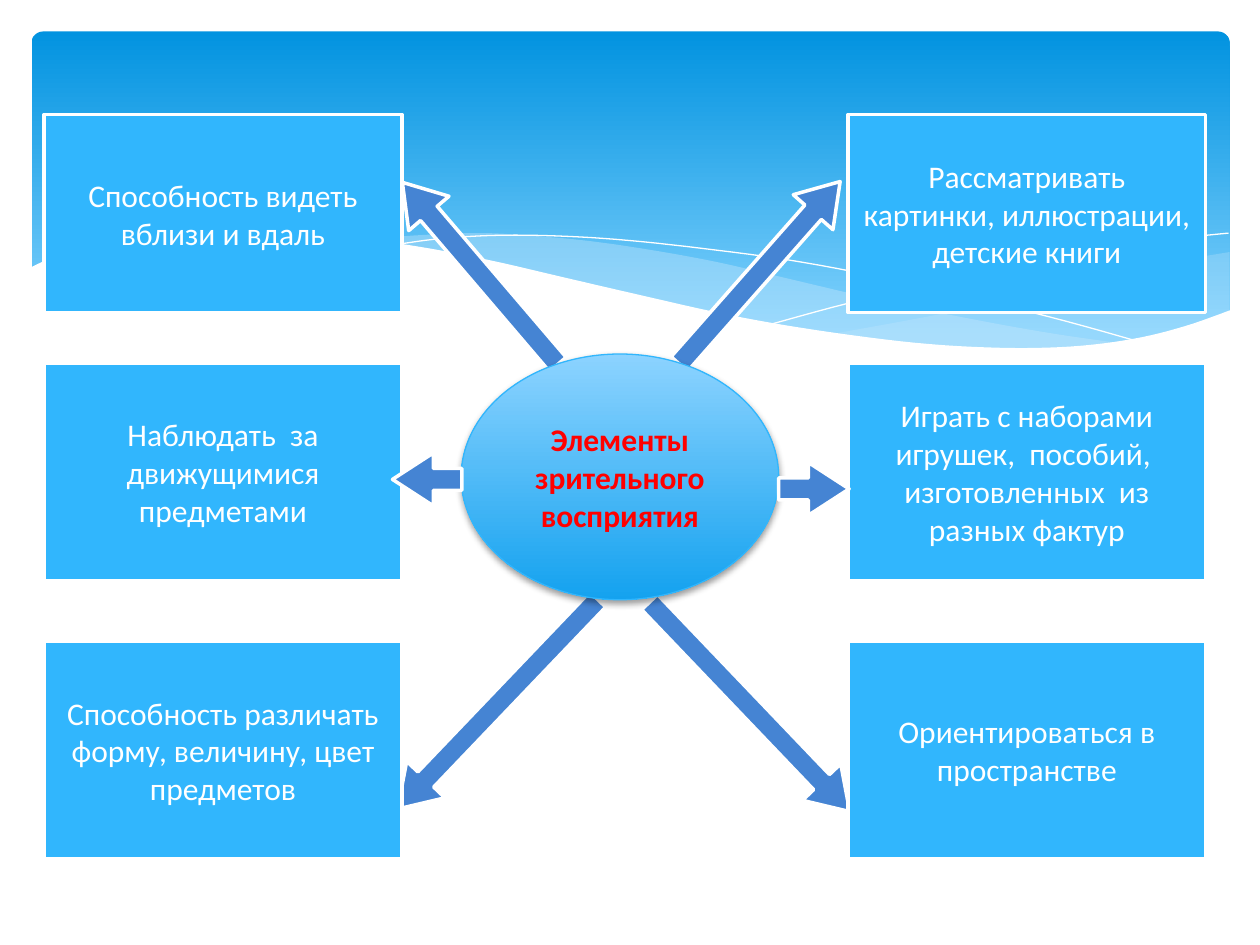
from dataclasses import dataclass
from typing import NamedTuple

from lxml import etree
from pptx import Presentation
from pptx import util as u
from pptx.dml.color import RGBColor
from pptx.enum import shapes, text
from pptx.oxml import ns

PX = 9144  # 100 px to the inch


@dataclass(frozen=True)
class Theme:
    font: str = "Calibri"
    size: int = 18
    white: str = "FFFFFF"
    card: str = "31B6FD"
    arrow: str = "4584D3"
    title: str = "FF0000"
    wave: str = "C6E7FC"
    sky: tuple[str, str] = ("0293E0", "83D3FE")
    hub: tuple[str, str] = ("8CD3FF", "14A2EF")
    border: float = 2
    hub_border: float = 0.75


class Box(NamedTuple):
    left: int
    top: int
    width: int
    height: int


class Arrow(NamedTuple):
    box: Box
    rotation: float


class Row(NamedTuple):
    top: int
    height: int
    left_text: str
    right_text: str


THEME = Theme()
CARD_WIDTH = 284
CARD_LEFTS = (35, 673)
ROWS = (
    Row(91, 157, "Способность видеть вблизи и вдаль",
        "Рассматривать картинки, иллюстрации, детские книги"),
    Row(288, 173, "Наблюдать  за движущимися предметами",
        "Играть с наборами игрушек,  пособий,  изготовленных  из разных фактур"),
    Row(509, 173, "Способность различать форму, величину, цвет предметов",
        "Ориентироваться в пространстве"),
)
DIAGONAL_ARROWS = (
    Arrow(Box(574, 446, 42, 230), 316.3),
    Arrow(Box(374, 444, 42, 230), 43.7),
    Arrow(Box(360, 122, 42, 190), 139.5),
    Arrow(Box(582, 120, 42, 193), 221.4),
)
SIDE_ARROWS = (
    Arrow(Box(625, 360, 42, 56), 270),
    Arrow(Box(318, 353, 42, 55), 90),
)

Points = list[tuple[float, float]]
RIGHT_WAVE_TOP: Points = [(976, 200), (935, 207), (891, 216), (832, 230), (753, 248),
                          (661, 265)]
RIGHT_WAVE_BOTTOM: Points = [(661, 265), (705, 271), (757, 275), (814, 278), (863, 275),
                             (913, 267), (949, 257), (976, 247)]
LONG_WAVE_TOP: Points = [(893, 273), (837, 265), (775, 254), (706, 240), (629, 222),
                         (569, 208), (514, 198), (465, 191), (420, 187), (380, 185),
                         (328, 187), (286, 191)]
LONG_WAVE_BOTTOM: Points = [(286, 191), (342, 199), (404, 211), (449, 222), (530, 240),
                            (601, 255), (665, 266), (722, 274), (773, 277), (818, 278),
                            (857, 277), (893, 273)]
LONG_LINE: Points = [(309, 195), (344, 190), (387, 187), (433, 187), (489, 190), (556, 197),
                     (636, 208), (727, 226), (831, 251), (907, 272)]
RIGHT_LINE: Points = [(613, 257), (672, 241), (748, 223), (836, 204), (910, 192), (975, 185)]
WHITE_EDGE: Points = [(977, 246), (940, 259), (899, 269), (850, 275), (793, 276), (726, 272),
                      (648, 262), (579, 250), (503, 233), (447, 220), (391, 207), (340, 197),
                      (292, 190), (250, 186), (211, 184), (161, 184), (119, 187), (85, 193),
                      (59, 199), (40, 205), (23, 213)]
WHITE_BASE: Points = [(23, 329), (977, 329)]


def smooth(keys: Points, steps: int = 6) -> Points:
    """Catmull-Rom curve through the key points."""
    padded = [keys[0], *keys, keys[-1]]
    curve = [keys[0]]
    for a, b, c, d in zip(padded, padded[1:], padded[2:], padded[3:]):
        for step in range(1, steps + 1):
            t = step / steps
            curve.append(tuple(
                (2 * q + (r - p) * t + (2 * p - 5 * q + 4 * r - s) * t ** 2
                 + (3 * q - p - 3 * r + s) * t ** 3) / 2
                for p, q, r, s in zip(a, b, c, d)))
    return curve


def paint(shape, fill: str, line: str | None = None, width: float = 0) -> None:
    shape.shadow.inherit = False
    shape.fill.solid()
    shape.fill.fore_color.rgb = RGBColor.from_string(fill)
    outline(shape, line, width)


def outline(shape, color: str | None, width: float) -> None:
    if color is None:
        shape.line.fill.background()
        return
    shape.line.color.rgb = RGBColor.from_string(color)
    shape.line.width = u.Pt(width)


def paint_gradient(shape, colors: tuple[str, str], end: float) -> None:
    """Fill from top to bottom, reaching the second colour at the given share."""
    shape.shadow.inherit = False
    shape.fill.gradient()
    shape.fill.gradient_angle = 270
    for stop, color, position in zip(shape.fill.gradient_stops, colors, (0, end)):
        stop.color.rgb = RGBColor.from_string(color)
        stop.position = position


def add_preset(slide, kind: shapes.MSO_SHAPE, box: Box):
    return slide.shapes.add_shape(kind, *(u.Emu(value * PX) for value in box))


def add_path(slide, points: Points, closed: bool = True):
    start, *rest = [(x * PX, y * PX) for x, y in points]
    builder = slide.shapes.build_freeform(*start, scale=1.0)
    builder.add_line_segments(rest, close=closed)
    return builder.convert_to_shape()


def add_wave(slide, points: Points, opacity: int) -> None:
    wave = add_path(slide, points)
    paint(wave, THEME.wave)
    color = wave.fill._xPr.find(".//" + ns.qn("a:srgbClr"))
    etree.SubElement(color, ns.qn("a:alpha"), val=str(opacity * 1000))


def add_hairline(slide, keys: Points) -> None:
    line = add_path(slide, smooth(keys), closed=False)
    line.shadow.inherit = False
    line.fill.background()
    outline(line, THEME.white, 0)


def add_backdrop(slide) -> None:
    sky = add_preset(slide, shapes.MSO_SHAPE.ROUNDED_RECTANGLE, Box(25, 25, 951, 270))
    sky.adjustments[0] = 0.034
    paint_gradient(sky, THEME.sky, 0.9)
    outline(sky, None, 0)
    add_wave(slide, smooth(RIGHT_WAVE_TOP) + smooth(RIGHT_WAVE_BOTTOM), 29)
    add_wave(slide, smooth(LONG_WAVE_TOP) + smooth(LONG_WAVE_BOTTOM), 40)
    add_hairline(slide, LONG_LINE)
    add_hairline(slide, RIGHT_LINE)
    paint(add_path(slide, smooth(WHITE_EDGE) + WHITE_BASE), THEME.white)


def add_arrow(slide, arrow: Arrow) -> None:
    pointer = add_preset(slide, shapes.MSO_SHAPE.DOWN_ARROW, arrow.box)
    pointer.adjustments[0], pointer.adjustments[1] = 0.415, 0.771
    pointer.rotation = arrow.rotation
    paint(pointer, THEME.arrow, THEME.white, THEME.border)


def write(shape, wording: str, color: str, bold: bool = False) -> None:
    frame = shape.text_frame
    frame.word_wrap = True
    frame.vertical_anchor = text.MSO_ANCHOR.MIDDLE
    paragraph = frame.paragraphs[0]
    paragraph.text = wording
    paragraph.alignment = text.PP_ALIGN.CENTER
    font = paragraph.font
    font.name, font.size, font.bold = THEME.font, u.Pt(THEME.size), bold
    font.color.rgb = RGBColor.from_string(color)


def add_hub(slide) -> None:
    hub = add_preset(slide, shapes.MSO_SHAPE.OVAL, Box(366, 281, 252, 195))
    paint_gradient(hub, THEME.hub, 1)
    outline(hub, THEME.card, THEME.hub_border)
    effects = hub._element.spPr.find(ns.qn("a:effectLst"))
    shadow = etree.SubElement(effects, ns.qn("a:outerShdw"), blurRad=str(u.Pt(4)),
                              dist=str(u.Pt(2)), dir="5400000", rotWithShape="0")
    color = etree.SubElement(shadow, ns.qn("a:srgbClr"), val="000000")
    etree.SubElement(color, ns.qn("a:alpha"), val="38000")
    write(hub, "Элементы зрительного восприятия", THEME.title, bold=True)


def add_card(slide, box: Box, wording: str) -> None:
    card = add_preset(slide, shapes.MSO_SHAPE.RECTANGLE, box)
    paint(card, THEME.card, THEME.white, THEME.border)
    write(card, wording, THEME.white)


def main() -> None:
    deck = Presentation()
    deck.slide_width, deck.slide_height = u.Emu(1000 * PX), u.Emu(750 * PX)
    slide = deck.slides.add_slide(deck.slide_layouts[6])
    add_backdrop(slide)
    for arrow in DIAGONAL_ARROWS:
        add_arrow(slide, arrow)
    add_hub(slide)
    for row in ROWS:
        for left, wording in zip(CARD_LEFTS, (row.left_text, row.right_text)):
            add_card(slide, Box(left, row.top, CARD_WIDTH, row.height), wording)
    for arrow in SIDE_ARROWS:
        add_arrow(slide, arrow)
    deck.save("out.pptx")


if __name__ == "__main__":
    main()
